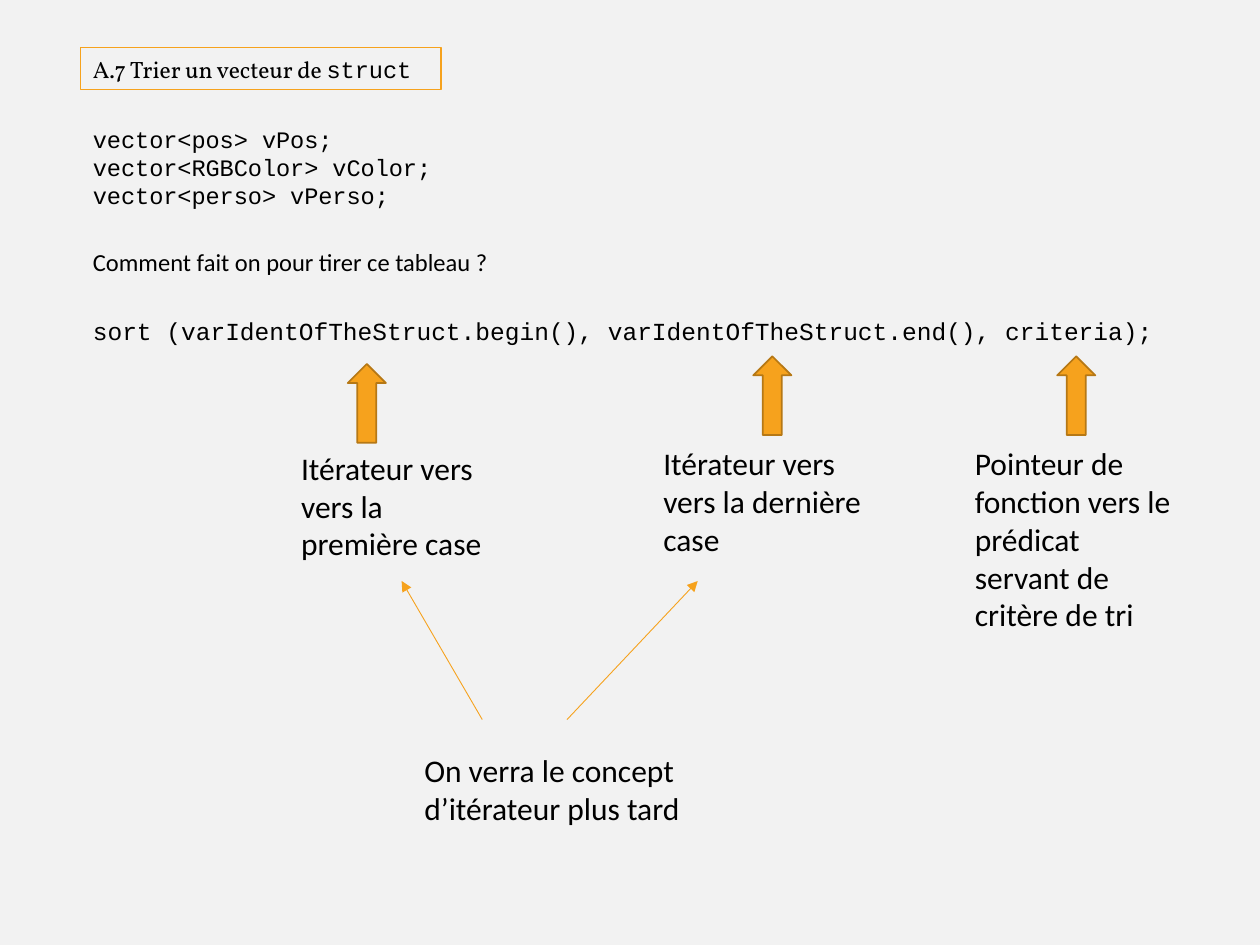
from lxml.etree import SubElement
from pptx import Presentation
from pptx.dml.color import RGBColor
from pptx.enum.shapes import MSO_CONNECTOR, MSO_SHAPE
from pptx.enum.text import MSO_ANCHOR, MSO_AUTO_SIZE, PP_ALIGN
from pptx.oxml.ns import qn
from pptx.util import Pt

COLORS = {"page": "F2F2F2", "text": "000000", "orange": "F6A21D", "edge": "B67815"}
CODE, BODY, TITLE = "Courier New", "Calibri", "Vollkorn"


def color(name):
    return RGBColor.from_string(COLORS[name])


def write(box, paragraphs, size):
    frame = box.text_frame
    settings = {"word_wrap": True, "auto_size": MSO_AUTO_SIZE.SHAPE_TO_FIT_TEXT}
    for name, value in settings.items():
        setattr(frame, name, value)
    for index, spans in enumerate(paragraphs):
        para = frame.paragraphs[0] if index == 0 else frame.add_paragraph()
        para.alignment = PP_ALIGN.LEFT
        for text, font in spans:
            span = para.add_run()
            span.text = text
            for name, value in {"name": font, "size": Pt(size)}.items():
                setattr(span.font, name, value)
            span.font.color.rgb = color("text")


deck = Presentation()
deck.slide_width, deck.slide_height = Pt(720), Pt(540)
page = deck.slides.add_slide(deck.slide_layouts[6])
page.background.fill.solid()
page.background.fill.fore_color.rgb = color("page")

title = page.shapes.add_shape(MSO_SHAPE.RECTANGLE, Pt(46), Pt(27.2), Pt(206), Pt(24))
title.shadow.inherit = False
title.fill.background()
title.line.color.rgb = color("orange")
title.line.width = Pt(0.75)
write(title, [[("A.7 Trier un vecteur de ", TITLE), ("struct", CODE)]], 13.5)
title.text_frame.vertical_anchor = MSO_ANCHOR.MIDDLE

declarations = ["vector<pos> vPos;", "vector<RGBColor> vColor;", "vector<perso> vPerso;"]
call = "sort (varIdentOfTheStruct.begin(), varIdentOfTheStruct.end(), criteria);"
texts = [
    (46, 67.7, 410, 56, declarations, CODE, 13.5),
    (46, 137.7, 541, 24.5, ["Comment fait on pour tirer ce tableau ?"], BODY, 14),
    (46, 177.3, 651, 24.5, [call], CODE, 14),
    (165, 252.9, 129.6, 72.7, ["Itérateur vers vers la première case"], BODY, 18),
    (372, 250.3, 129.6, 72.7, ["Itérateur vers vers la dernière case"], BODY, 18),
    (550, 250.3, 129.6, 116.6,
     ["Pointeur de fonction vers le prédicat servant de critère de tri"], BODY, 18),
    (235.4, 425.5, 221, 51, ["On verra le concept d’itérateur plus tard"], BODY, 18),
]
for left, top, width, height, lines, font, size in texts:
    box = page.shapes.add_textbox(Pt(left), Pt(top), Pt(width), Pt(height))
    write(box, [[(line, font)] for line in lines], size)

for left, top in [(198.7, 208), (430.4, 203.6), (604.1, 203.6)]:
    arrow = page.shapes.add_shape(MSO_SHAPE.UP_ARROW, Pt(left), Pt(top), Pt(21.8), Pt(45))
    arrow.shadow.inherit = False
    arrow.fill.solid()
    arrow.fill.fore_color.rgb = color("orange")
    arrow.line.color.rgb = color("edge")
    arrow.line.width = Pt(1)

for start, end in [(275.6, 229.5), (324, 398.7)]:
    pointer = page.shapes.add_connector(
        MSO_CONNECTOR.STRAIGHT, Pt(start), Pt(411.2), Pt(end), Pt(332))
    pointer.line.color.rgb = color("orange")
    pointer.line.width = Pt(0.5)
    SubElement(pointer.line._get_or_add_ln(), qn("a:tailEnd"), type="triangle")
    SubElement(pointer._element.spPr, qn("a:effectLst"))

deck.save("out.pptx")
